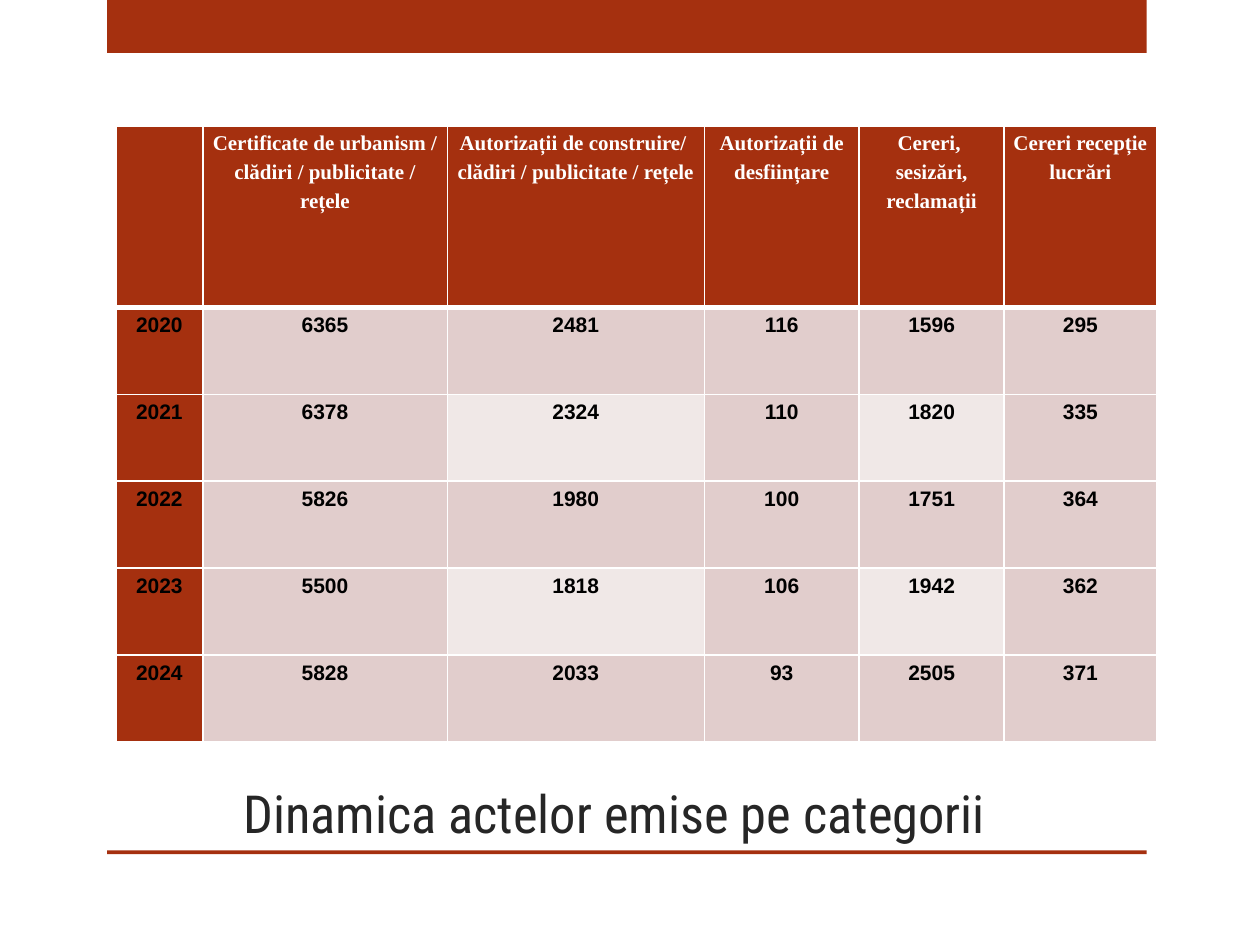
from lxml import etree
from pptx import Presentation
from pptx.dml.color import RGBColor
from pptx.enum.shapes import MSO_SHAPE
from pptx.enum.text import MSO_ANCHOR, PP_ALIGN
from pptx.oxml.ns import qn
from pptx.util import Inches, Pt

RECT = MSO_SHAPE.RECTANGLE
BOTTOM = MSO_ANCHOR.BOTTOM
CENTER = PP_ALIGN.CENTER

RUST, ROSE, PALE = "A5300F", "E1CDCC", "F0E8E7"
WHITE, BLACK, DARK = "FFFFFF", "000000", "262626"

TITLE = "Dinamica actelor emise pe categorii"
HEADERS = [
    "",
    "Certificate de urbanism / clădiri / publicitate / rețele",
    "Autorizații de construire/  clădiri / publicitate / rețele",
    "Autorizații de desființare",
    "Cereri,  sesizări, reclamații",
    "Cereri recepție lucrări",
]
YEARS = [
    (2020, 6365, 2481, 116, 1596, 295),
    (2021, 6378, 2324, 110, 1820, 335),
    (2022, 5826, 1980, 100, 1751, 364),
    (2023, 5500, 1818, 106, 1942, 362),
    (2024, 5828, 2033, 93, 2505, 371),
]
COL_WIDTHS = [0.69, 1.94, 2.04, 1.23, 1.15, 1.21]
ROW_HEIGHTS = [1.44] + [0.69] * len(YEARS)
BARS = [(0.85, 0, 8.25, 0.42), (0.85, 6.75, 8.25, 0.03)]


def rgb(color):
    return RGBColor.from_string(color)


def add_run(p, text, font, size, color, bold=False):
    r = p.add_run()
    r.text = text
    r.font.name, r.font.size, r.font.bold = font, Pt(size), bold
    r.font.color.rgb = rgb(color)


def set_borders(cell, widths):
    """Draw white borders; widths are points for left, right, top, bottom."""
    tc_pr = cell._tc.get_or_add_tcPr()
    for i, (side, width) in enumerate(zip("LRTB", widths)):
        ln = etree.Element(qn(f"a:ln{side}"), w=str(Pt(width)))
        fill = etree.SubElement(ln, qn("a:solidFill"))
        etree.SubElement(fill, qn("a:srgbClr"), val=WHITE)
        tc_pr.insert(i, ln)


def cell_fill(row, col):
    if row == 0 or col == 0:
        return RUST
    return PALE if row % 2 == 0 and col in (2, 4) else ROSE


def fill_cell(cell, row, col, text):
    cell.fill.solid()
    cell.fill.fore_color.rgb = rgb(cell_fill(row, col))
    set_borders(cell, (1, 1, 3 if row == 1 else 1, 3 if row == 0 else 1))
    cell.margin_left = cell.margin_right = Inches(0.07)
    cell.margin_top = cell.margin_bottom = 0
    if not text:
        return
    p = cell.text_frame.paragraphs[0]
    p.alignment, p.line_spacing, p.space_after = CENTER, 1.25, Pt(9)
    font, color = ("Times New Roman", WHITE) if row == 0 else ("Arial", BLACK)
    add_run(p, text, font, 12, color, bold=True)


prs = Presentation()
prs.slide_width, prs.slide_height = Inches(10), Inches(7.5)
s = prs.slides.add_slide(prs.slide_layouts[6])

for box in BARS:
    bar = s.shapes.add_shape(RECT, *map(Inches, box))
    bar.shadow.inherit = False
    bar.fill.solid()
    bar.fill.fore_color.rgb = rgb(RUST)
    bar.line.fill.background()

title = s.shapes.add_textbox(*map(Inches, (0.83, 6, 8.25, 0.75)))
tf = title.text_frame
tf.word_wrap = True
tf.vertical_anchor = BOTTOM
tf.margin_left = Inches(1.1)
add_run(tf.paragraphs[0], TITLE, "Roboto Condensed", 30, DARK)

rows = [HEADERS, *YEARS]
frame = s.shapes.add_table(len(rows), len(HEADERS),
                           *map(Inches, (0.92, 1, 8.25, 4.89)))
table = frame.table
for column, width in zip(table.columns, COL_WIDTHS):
    column.width = Inches(width)
for i, (values, height) in enumerate(zip(rows, ROW_HEIGHTS)):
    table.rows[i].height = Inches(height)
    for j, value in enumerate(values):
        fill_cell(table.cell(i, j), i, j, str(value))

prs.save("out.pptx")
